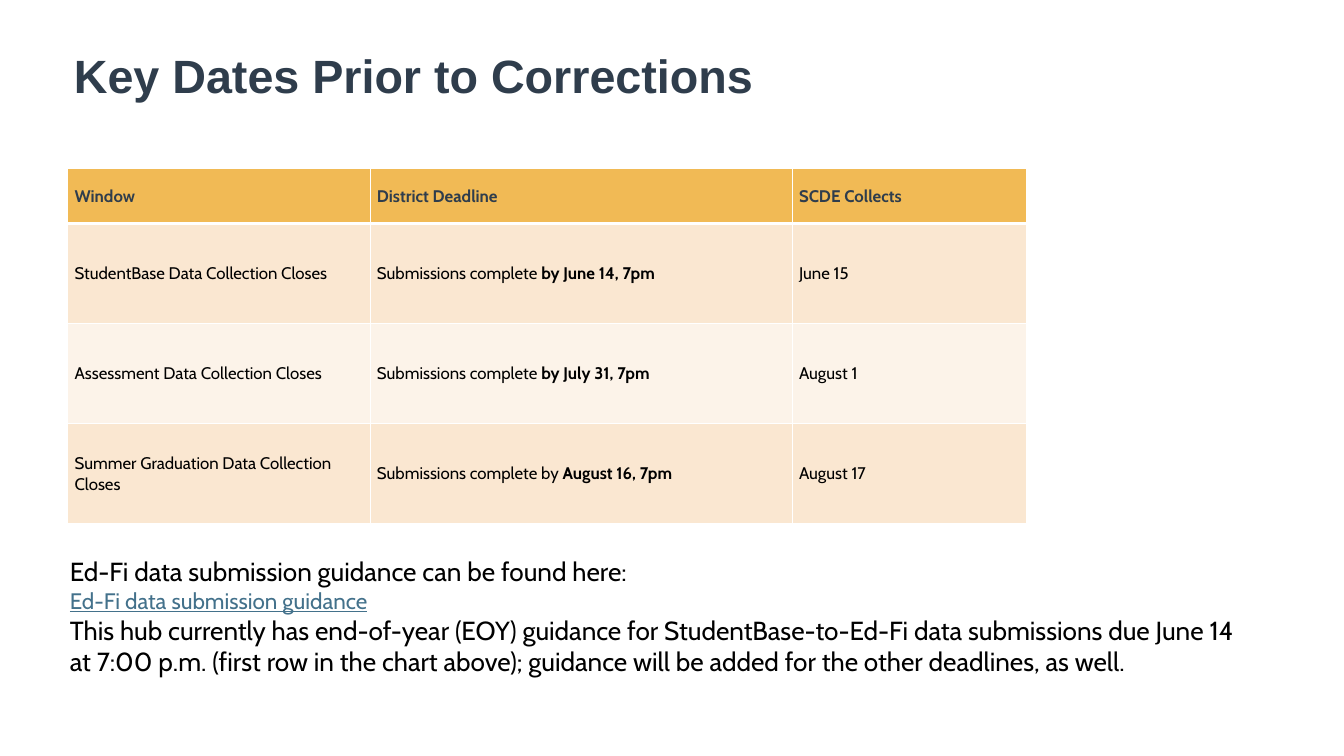
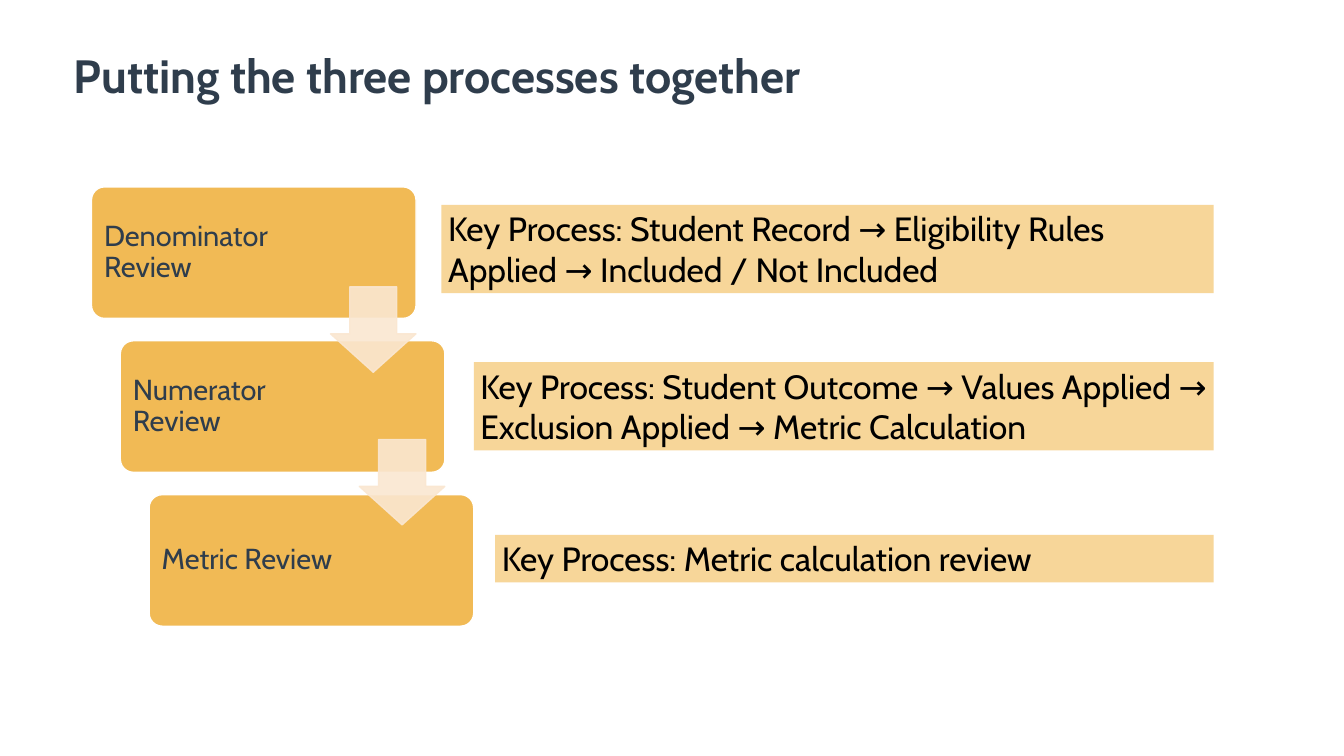
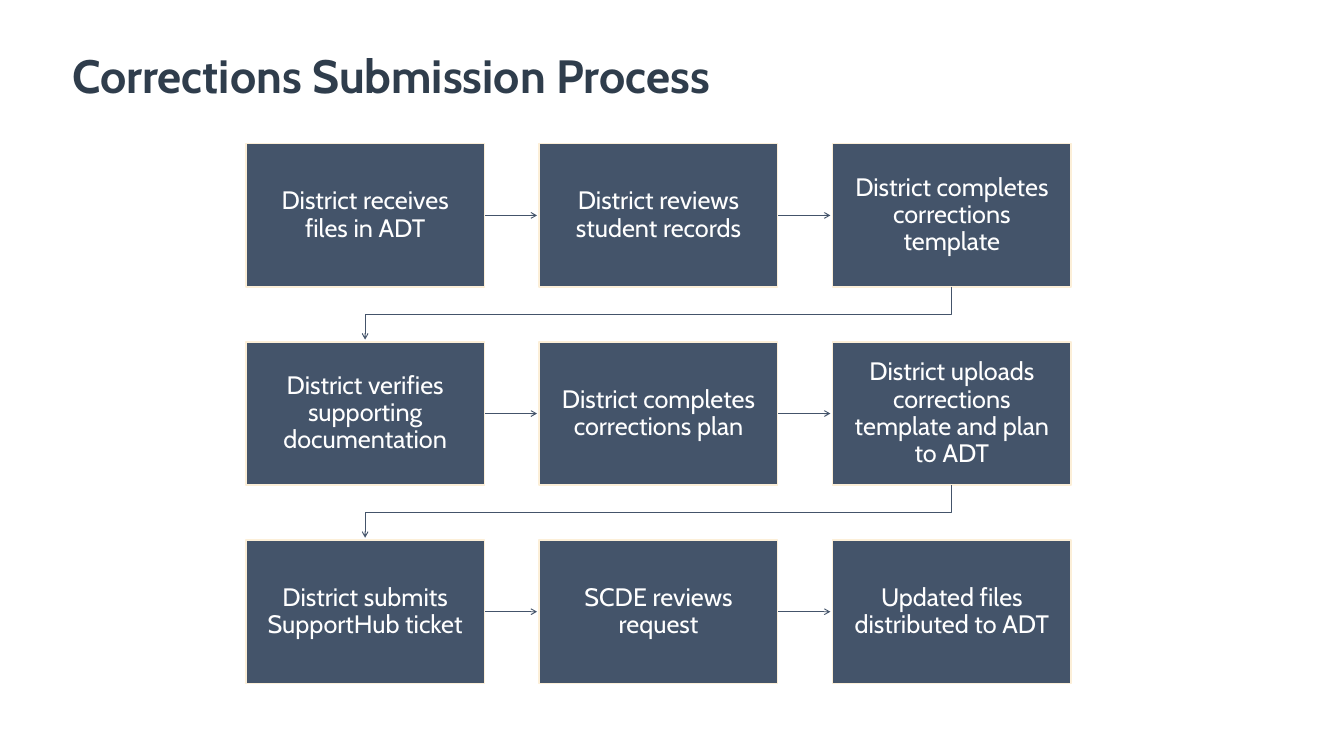
from lxml import etree
from pptx import Presentation
from pptx.dml.color import RGBColor
from pptx.enum.shapes import MSO_CONNECTOR, MSO_SHAPE
from pptx.enum.text import MSO_ANCHOR, PP_ALIGN
from pptx.oxml.ns import qn
from pptx.util import Pt

RECT, ROUNDED, DOWN = MSO_SHAPE.RECTANGLE, MSO_SHAPE.ROUNDED_RECTANGLE, MSO_SHAPE.DOWN_ARROW
STRAIGHT = MSO_CONNECTOR.STRAIGHT
TOP, MIDDLE = MSO_ANCHOR.TOP, MSO_ANCHOR.MIDDLE
LEFT, CENTER = PP_ALIGN.LEFT, PP_ALIGN.CENTER

COLORS = {
    "ink": "2F3D4C", "black": "000000", "white": "FFFFFF", "link": "43718B",
    "gold": "F1BA55", "pale_gold": "F7D699", "peach": "FAE7D1",
    "cream": "FCF3E9", "slate": "44546A", "edge": "FCEFD8",
}
FONT = "Cabin"


def rgb(name):
    return RGBColor.from_string(COLORS[name])


class Deck:
    def __init__(self, width, height):
        self.prs = Presentation()
        self.prs.slide_width, self.prs.slide_height = Pt(width), Pt(height)
        self.s = None

    def slide(self, title, left=72, font=FONT):
        self.s = self.prs.slides.add_slide(self.prs.slide_layouts[6])
        self.text(left, 43.2, 1295.3, 86.4, [[(title, True)]], 50, "ink", font=font,
                  anchor=MIDDLE, spacing=0.9, margins=(7.2, 3.6, 7.2, 8))

    def run(self, p, text, size, color, bold=False, underline=False, font=FONT):
        r = p.add_run()
        r.text = text
        r.font.name, r.font.size, r.font.bold = font, Pt(size), bold
        r.font.underline = underline
        r.font.color.rgb = rgb(color)

    def fill_frame(self, tf, paragraphs, size, color, font=FONT, anchor=TOP,
                   align=LEFT, spacing=None, margins=(7.2, 3.6, 7.2, 3.6)):
        """Each paragraph is a list of (text, bold) runs."""
        tf.word_wrap, tf.vertical_anchor = True, anchor
        tf.margin_left, tf.margin_top, tf.margin_right, tf.margin_bottom = map(Pt, margins)
        for i, runs in enumerate(paragraphs):
            p = tf.add_paragraph() if i else tf.paragraphs[0]
            p.alignment = align
            if spacing:
                p.line_spacing = spacing
            for text, bold in runs:
                self.run(p, text, size, color, bold, font=font)

    def text(self, x, y, w, h, paragraphs, size, color, **style):
        tf = self.s.shapes.add_textbox(Pt(x), Pt(y), Pt(w), Pt(h)).text_frame
        self.fill_frame(tf, paragraphs, size, color, **style)
        return tf

    def shape(self, kind, x, y, w, h, fill, line=None, adj=(), alpha=None):
        sp = self.s.shapes.add_shape(kind, Pt(x), Pt(y), Pt(w), Pt(h))
        sp.shadow.inherit = False
        for i, value in enumerate(adj):
            sp.adjustments[i] = value
        sp.fill.solid()
        sp.fill.fore_color.rgb = rgb(fill)
        if line:
            sp.line.color.rgb, sp.line.width = rgb(line), Pt(1.5)
        else:
            sp.line.fill.background()
        if alpha:
            for color in sp._element.spPr.iter(qn("a:srgbClr")):
                etree.SubElement(color, qn("a:alpha"), val=str(alpha * 1000))
        return sp

    def box(self, kind, x, y, w, h, text, size, color, fill, line=None, adj=(), **style):
        sp = self.shape(kind, x, y, w, h, fill, line, adj)
        self.fill_frame(sp.text_frame, [[(text, False)]], size, color, **style)

    def arrow(self, points):
        """Straight connector for two points, bent open outline for more."""
        (x1, y1), *rest = [(Pt(x), Pt(y)) for x, y in points]
        if len(rest) == 1:
            sp = self.s.shapes.add_connector(STRAIGHT, x1, y1, *rest[0])
            etree.SubElement(sp._element.spPr, qn("a:effectLst"))
        else:
            builder = self.s.shapes.build_freeform(x1, y1)
            builder.add_line_segments(rest, close=False)
            sp = builder.convert_to_shape()
            sp.shadow.inherit = False
            sp.fill.background()
        sp.line.color.rgb, sp.line.width = rgb("slate"), Pt(1)
        etree.SubElement(sp.line._get_or_add_ln(), qn("a:tailEnd"), type="arrow")

    def borders(self, cell, **widths):
        tcPr = cell._tc.get_or_add_tcPr()
        for side in "LRTB":
            ln = etree.SubElement(tcPr, qn(f"a:ln{side}"), w=str(Pt(widths.get(side, 1))))
            solid = etree.SubElement(ln, qn("a:solidFill"))
            etree.SubElement(solid, qn("a:srgbClr"), val=COLORS["white"])

    def table(self, x, y, widths, heights, rows, size):
        frame = self.s.shapes.add_table(len(rows), len(widths), Pt(x), Pt(y),
                                        Pt(sum(widths)), Pt(sum(heights)))
        table = frame.table
        for column, w in zip(table.columns, widths):
            column.width = Pt(w)
        for i, (row, h) in enumerate(zip(rows, heights)):
            table.rows[i].height = Pt(h)
            fill = "gold" if i == 0 else ("cream", "peach")[i % 2]
            for j, runs in enumerate(row):
                cell = table.cell(i, j)
                self.borders(cell, T=3 if i == 1 else 1, B=3 if i == 0 else 1)
                cell.fill.solid()
                cell.fill.fore_color.rgb = rgb(fill)
                cell.vertical_anchor = MIDDLE
                for text, bold in runs:
                    self.run(cell.text_frame.paragraphs[0], text, size,
                             "black" if i else "ink", bold)


def key_dates(deck):
    deck.slide("Key Dates Prior to Corrections", font="Arial")

    # Guidance below the table
    guidance = [
        ("Ed-Fi data submission guidance can be found here:", 28, "black", False),
        ("Ed-Fi data submission guidance", 24, "link", True),
        ("This hub currently has end-of-year (EOY) guidance for StudentBase-to-Ed-Fi data "
         "submissions due June 14 at 7:00 p.m. (first row in the chart above); guidance will "
         "be added for the other deadlines, as well.", 28, "black", False),
    ]
    tf = deck.text(31.7, 591.8, 1322, 138.2, [[] for _ in guidance], 28, "black",
                   margins=(43.2, 3.6, 7.2, 3.6))
    for p, (text, size, color, underline) in zip(tf.paragraphs, guidance):
        deck.run(p, text, size, color, underline=underline)

    # Deadlines
    header = [[(name, True)] for name in ("Window", "District Deadline", "SCDE Collects")]
    deadlines = [
        ("StudentBase Data Collection Closes", "Submissions complete ", "by June 14, 7pm", "June 15"),
        ("Assessment Data Collection Closes", "Submissions complete ", "by July 31, 7pm", "August 1"),
        ("Summer Graduation Data Collection Closes", "Submissions complete by ",
         "August 16, 7pm", "August 17"),
    ]
    rows = [[[(window, False)], [(lead, False), (due, True)], [(collects, False)]]
            for window, lead, due, collects in deadlines]
    deck.table(72.7, 180.7, [324, 452.2, 251.3], [59] + [107.2] * 3, [header] + rows, 18)


def three_processes(deck):
    deck.slide("Putting the three processes together")
    reviews = ["Denominator Review", "Numerator Review", "Metric Review"]

    # Staircase of reviews
    for i, review in enumerate(reviews):
        deck.box(ROUNDED, 98 + 30.9 * i, 200.2 + 164.9 * i, 347.8, 141, review, 31, "ink",
                 "gold", "white", [0.1], anchor=MIDDLE, spacing=0.9,
                 margins=(9.4, 9.4, 140, 9.4))
    for i in range(len(reviews) - 1):
        deck.shape(DOWN, 354.2 + 30.9 * i, 307.4 + 163.5 * i, 91.5, 91.5, "peach", "peach",
                   [0.55, 0.45], alpha=90)

    # Key process notes share a right edge
    right = 1300.3
    notes = [
        (473, 219.6, 94.6, "Student Record → Eligibility Rules Applied → Included / Not Included"),
        (507.6, 388.1, 94.6, "Student Outcome → Values Applied → Exclusion Applied → Metric Calculation"),
        (530.6, 573.1, 51, "Metric calculation review"),
    ]
    for x, y, h, note in notes:
        deck.box(RECT, x, y, right - x, h, "Key Process: " + note, 36, "black", "pale_gold")


def submission_process(deck):
    deck.slide("Corrections Submission Process", left=70.3)
    steps = [
        ["District receives files in ADT", "District reviews student records",
         "District completes corrections template"],
        ["District verifies supporting documentation", "District completes corrections plan",
         "District uploads corrections template and plan to ADT"],
        ["District submits SupportHub ticket", "SCDE reviews request",
         "Updated files distributed to ADT"],
    ]
    x0, y0, w, h, dx, dy = 263.4, 154.1, 255.6, 153.4, 314.3, 212.3
    reach = 56.4  # arrow length across a gap
    first, last = x0 + w / 2, x0 + 2 * dx + w / 2

    for i, row in enumerate(steps):
        y = y0 + i * dy
        for j, step in enumerate(row):
            x = x0 + j * dx
            if j < len(row) - 1:
                deck.arrow([(x + w, y + h / 2), (x + w + reach, y + h / 2)])
            deck.box(RECT, x, y, w, h, step, 27, "white", "slate", "edge", anchor=MIDDLE,
                     align=CENTER, spacing=0.9, margins=[15.1] * 4)
        # Return to the start of the next row
        if i < len(steps) - 1:
            bottom = y + h
            turn = bottom + 29.4
            deck.arrow([(last, bottom), (last, turn), (first, turn), (first, bottom + reach)])


def main():
    deck = Deck(1440, 810)
    key_dates(deck)
    three_processes(deck)
    submission_process(deck)
    deck.prs.save("out.pptx")


if __name__ == "__main__":
    main()
